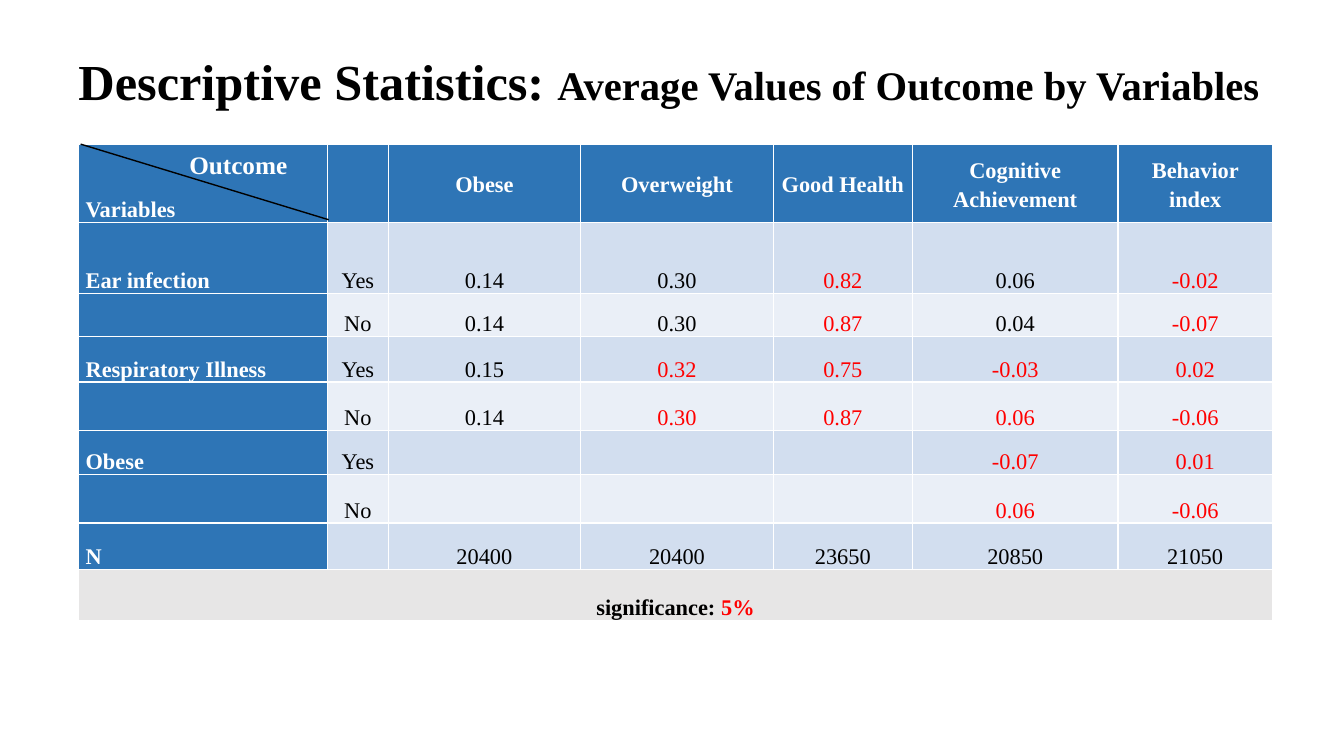
import dataclasses

import pptx
import pptx.dml.color
import pptx.enum.shapes
import pptx.enum.text
import pptx.oxml
import pptx.oxml.ns
import pptx.shapes.autoshape
import pptx.slide
import pptx.table
import pptx.text.text
import pptx.util

Inches = pptx.util.Inches
Align = pptx.enum.text.PP_ALIGN
Anchor = pptx.enum.text.MSO_ANCHOR


@dataclasses.dataclass(frozen=True)
class Theme:
    font: str = "Times New Roman"
    header: str = "2E75B6"
    bands: tuple[str, str] = ("D2DEEF", "EAEFF7")
    footer: str = "E7E6E6"
    dark: str = "000000"
    light: str = "FFFFFF"
    significant: str = "FF0000"
    title_size: int = 36
    subtitle_size: int = 29
    corner_size: int = 18
    table_size: int = 16


@dataclasses.dataclass(frozen=True)
class Run:
    text: str
    size: int
    color: str
    bold: bool = False


@dataclasses.dataclass(frozen=True)
class StatisticsRow:
    variable: str
    answer: str
    averages: tuple[str, ...]
    significant: tuple[int, ...] = ()


THEME = Theme()
LEFT, TOP = 0.78, 1.43
COLUMN_WIDTHS = (2.47, 0.6, 1.91, 1.91, 1.38, 2.04, 1.53)
ROW_HEIGHTS = (0.78, 0.7, 0.43, 0.45, 0.48, 0.44, 0.48, 0.46, 0.51)
HEADINGS = ("Variables", "", "Obese", "Overweight", "Good Health",
            "Cognitive Achievement", "Behavior index")
# The significant entries are positions within the averages.
STATISTICS = (
    StatisticsRow("Ear infection", "Yes", ("0.14", "0.30", "0.82", "0.06", "-0.02"), (2, 4)),
    StatisticsRow("", "No", ("0.14", "0.30", "0.87", "0.04", "-0.07"), (2, 4)),
    StatisticsRow("Respiratory Illness", "Yes", ("0.15", "0.32", "0.75", "-0.03", "0.02"), (1, 2, 3, 4)),
    StatisticsRow("", "No", ("0.14", "0.30", "0.87", "0.06", "-0.06"), (1, 2, 3, 4)),
    StatisticsRow("Obese", "Yes", ("", "", "", "-0.07", "0.01"), (3, 4)),
    StatisticsRow("", "No", ("", "", "", "0.06", "-0.06"), (3, 4)),
    StatisticsRow("N", "", ("20400", "20400", "23650", "20850", "21050")),
)


def rgb(color: str) -> pptx.dml.color.RGBColor:
    return pptx.dml.color.RGBColor.from_string(color)


def write_runs(para: pptx.text.text._Paragraph, runs: tuple[Run, ...]) -> None:
    for run in runs:
        span = para.add_run()
        span.text = run.text
        span.font.name = THEME.font
        span.font.size = pptx.util.Pt(run.size)
        span.font.bold = run.bold
        span.font.color.rgb = rgb(run.color)


def add_text(page: pptx.slide.Slide, left: float, top: float, width: float, height: float,
             runs: tuple[Run, ...], anchor: Anchor, spacing: float) -> None:
    box = page.shapes.add_textbox(Inches(left), Inches(top), Inches(width), Inches(height))
    box.text_frame.word_wrap = True
    box.text_frame.vertical_anchor = anchor
    para = box.text_frame.paragraphs[0]
    para.line_spacing = spacing
    write_runs(para, runs)


def fill_cell(cell: pptx.table._Cell, fill: str, runs: tuple[Run, ...],
              align: Align = Align.CENTER, anchor: Anchor = Anchor.BOTTOM,
              spacing: float = 1.15) -> None:
    cell.fill.solid()
    cell.fill.fore_color.rgb = rgb(fill)
    cell.margin_left = cell.margin_right = Inches(0.07)
    cell.margin_top = cell.margin_bottom = 0
    cell.vertical_anchor = anchor
    para = cell.text_frame.paragraphs[0]
    para.alignment = align
    para.line_spacing = spacing
    para.font.size = pptx.util.Pt(THEME.table_size)
    write_runs(para, tuple(run for run in runs if run.text))


def table_run(text: str, color: str, bold: bool = False) -> Run:
    return Run(text, THEME.table_size, color, bold)


def add_statistics_table(page: pptx.slide.Slide) -> None:
    frame = page.shapes.add_table(len(ROW_HEIGHTS), len(COLUMN_WIDTHS), Inches(LEFT), Inches(TOP),
                                  Inches(sum(COLUMN_WIDTHS)), Inches(sum(ROW_HEIGHTS)))
    table = frame.table
    table.horz_banding = False
    for column, width in zip(table.columns, COLUMN_WIDTHS):
        column.width = Inches(width)
    for row, height in zip(table.rows, ROW_HEIGHTS):
        row.height = Inches(height)

    for index, heading in enumerate(HEADINGS):
        runs = (table_run(heading, THEME.light, True),)
        if index == 0:
            fill_cell(table.cell(0, index), THEME.header, runs, Align.LEFT, spacing=1.07)
        else:
            fill_cell(table.cell(0, index), THEME.header, runs, anchor=Anchor.MIDDLE)

    for number, record in enumerate(STATISTICS, start=1):
        band = THEME.bands[(number - 1) % 2]
        label = table_run(record.variable, THEME.light, True)
        fill_cell(table.cell(number, 0), THEME.header, (label,), Align.LEFT)
        fill_cell(table.cell(number, 1), band, (table_run(record.answer, THEME.dark),))
        for index, average in enumerate(record.averages):
            color = THEME.significant if index in record.significant else THEME.dark
            fill_cell(table.cell(number, index + 2), band, (table_run(average, color),))

    last = len(ROW_HEIGHTS) - 1
    footer = table.cell(last, 0)
    footer.merge(table.cell(last, len(COLUMN_WIDTHS) - 1))
    fill_cell(footer, THEME.footer, (table_run("significance: ", THEME.dark, True),
                                     table_run("5%", THEME.significant, True)), spacing=1.07)


def add_corner_diagonal(page: pptx.slide.Slide) -> None:
    line = page.shapes.add_connector(pptx.enum.shapes.MSO_CONNECTOR.STRAIGHT,
                                     Inches(0.8), Inches(TOP), Inches(3.26), Inches(2.18))
    line.line.color.rgb = rgb(THEME.dark)
    line.line.width = pptx.util.Pt(1)
    properties = line._element.spPr
    properties.append(pptx.oxml.parse_xml(f"<a:effectLst {pptx.oxml.ns.nsdecls('a')}/>"))


def main() -> None:
    deck = pptx.Presentation()
    deck.slide_width, deck.slide_height = Inches(13.33), Inches(7.5)
    page = deck.slides.add_slide(deck.slide_layouts[6])
    add_statistics_table(page)
    add_corner_diagonal(page)
    title = (Run("Descriptive Statistics: ", THEME.title_size, THEME.dark, True),
             Run("Average Values of Outcome by Variables", THEME.subtitle_size, THEME.dark, True))
    add_text(page, 0.68, 0.48, 12.25, 0.71, title, Anchor.MIDDLE, 0.9)
    outcome = (Run("Outcome", THEME.corner_size, THEME.light, True),)
    add_text(page, 1.78, TOP, 1.65, 0.4, outcome, Anchor.TOP, 1.0)
    deck.save("out.pptx")


if __name__ == "__main__":
    main()
